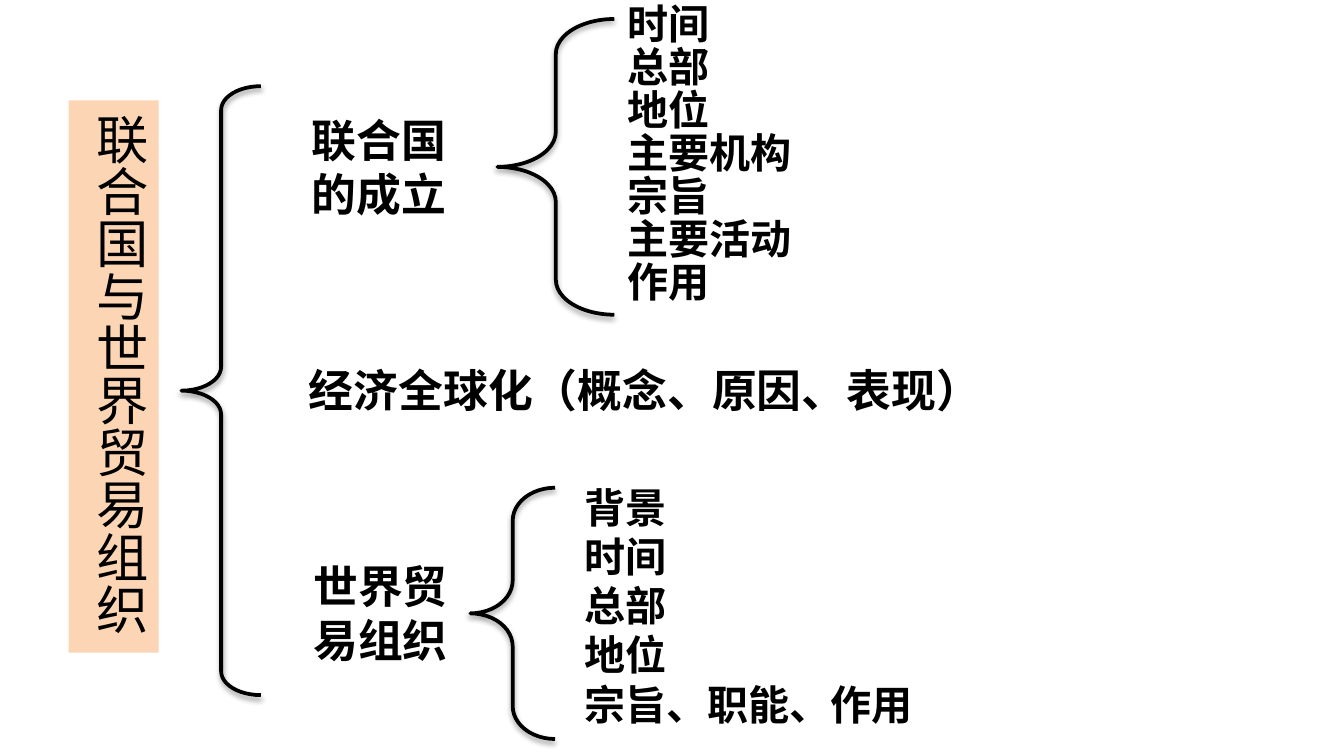
from dataclasses import dataclass

from lxml import etree
from pptx import Presentation
from pptx.dml.color import RGBColor
from pptx.enum.shapes import MSO_SHAPE
from pptx.enum.text import MSO_ANCHOR, MSO_AUTO_SIZE, PP_ALIGN
from pptx.oxml.ns import qn
from pptx.util import Cm, Pt

LEFT, CENTER, RIGHT = PP_ALIGN.LEFT, PP_ALIGN.CENTER, PP_ALIGN.RIGHT
TOP = MSO_ANCHOR.TOP
GROW = MSO_AUTO_SIZE.SHAPE_TO_FIT_TEXT
BRACE, RECTANGLE = MSO_SHAPE.LEFT_BRACE, MSO_SHAPE.RECTANGLE


@dataclass(frozen=True)
class Theme:
    ink: RGBColor = RGBColor(0x00, 0x00, 0x00)
    peach: RGBColor = RGBColor(0xFC, 0xD5, 0xB5)
    body_font: str = "Calibri"
    heading_font: str = "Noto Sans CJK SC"
    topic_size: Pt = Pt(28)
    branch_size: Pt = Pt(24)
    detail_size: Pt = Pt(22)
    brace_width: Pt = Pt(2)


THEME = Theme()


def place(left, top, width, height):
    return Cm(left), Cm(top), Cm(width), Cm(height)


def write(frame, lines, size, font=THEME.body_font, bold=True, align=LEFT,
          line_spacing=None, space_before=None):
    frame.word_wrap = True
    frame.auto_size = GROW
    frame.vertical_anchor = TOP
    for index, line in enumerate(lines):
        paragraph = frame.add_paragraph() if index else frame.paragraphs[0]
        paragraph.alignment = align
        paragraph.line_spacing = line_spacing
        paragraph.space_before = space_before
        run = paragraph.add_run()
        run.text = line
        run.font.name = font
        run.font.size = size
        run.font.bold = bold
        run.font.color.rgb = THEME.ink
        east_asian = etree.SubElement(run.font._element, qn("a:ea"))
        east_asian.set("typeface", font)


def add_text(slide, box, lines, size, **style):
    write(slide.shapes.add_textbox(*place(*box)).text_frame, lines, size, **style)


def add_brace(slide, box, curl):
    brace = slide.shapes.add_shape(BRACE, *place(*box))
    brace.adjustments[0] = curl
    brace.adjustments[1] = 0.5
    brace.fill.background()
    brace.line.color.rgb = THEME.ink
    brace.line.width = THEME.brace_width
    brace.shadow.inherit = False
    effects = brace.element.spPr.find(qn("a:effectLst"))
    shadow = etree.SubElement(effects, qn("a:outerShdw"), blurRad=str(Pt(3.1)),
                              dist=str(Pt(1.6)), dir="5400000", rotWithShape="0")
    color = etree.SubElement(shadow, qn("a:srgbClr"), val=str(THEME.ink))
    etree.SubElement(color, qn("a:alpha"), val="38000")


def add_topic(slide, box, topic):
    banner = slide.shapes.add_shape(RECTANGLE, *place(*box))
    banner.fill.solid()
    banner.fill.fore_color.rgb = THEME.peach
    banner.line.fill.background()
    banner.shadow.inherit = False
    write(banner.text_frame, [topic], THEME.topic_size,
          font=THEME.heading_font, bold=False)
    banner.text_frame._txBody.bodyPr.set("vert", "eaVert")


def main():
    presentation = Presentation()
    presentation.slide_width = Cm(25.4)
    presentation.slide_height = Cm(14.29)
    slide = presentation.slides.add_slide(presentation.slide_layouts[6])

    add_text(slide, (5.26, 2, 3.81, 2.31), ["联合国的成立"], THEME.branch_size,
             font=THEME.heading_font, align=CENTER, line_spacing=Pt(29))
    add_text(slide, (4.9, 10.44, 3.81, 2.31), ["世界贸易组织"], THEME.branch_size,
             align=RIGHT)
    add_text(slide, (10.8, 8.99, 7.59, 4.95),
             ["背景", "时间", "总部", "地位", "宗旨、职能、作用"], THEME.detail_size)
    add_brace(slide, (9.4, 0.36, 2.21, 5.59), 0.3)
    add_text(slide, (11.61, 0.36, 8.61, 6.07),
             ["时间", "总部", "地位", "主要机构", "宗旨", "主要活动", "作用"],
             THEME.detail_size, line_spacing=Pt(12), space_before=Pt(11))
    add_brace(slide, (8.89, 9.22, 1.6, 4.75), 0.39)
    add_text(slide, (5.59, 6.73, 14.91, 1.27), ["经济全球化（概念、原因、表现）"],
             THEME.branch_size)
    add_topic(slide, (1.3, 1.9, 1.7, 10.44), "联合国与世界贸易组织")
    add_brace(slide, (3.43, 1.63, 1.5, 11.51), 0.3)

    presentation.save("out.pptx")


if __name__ == "__main__":
    main()
